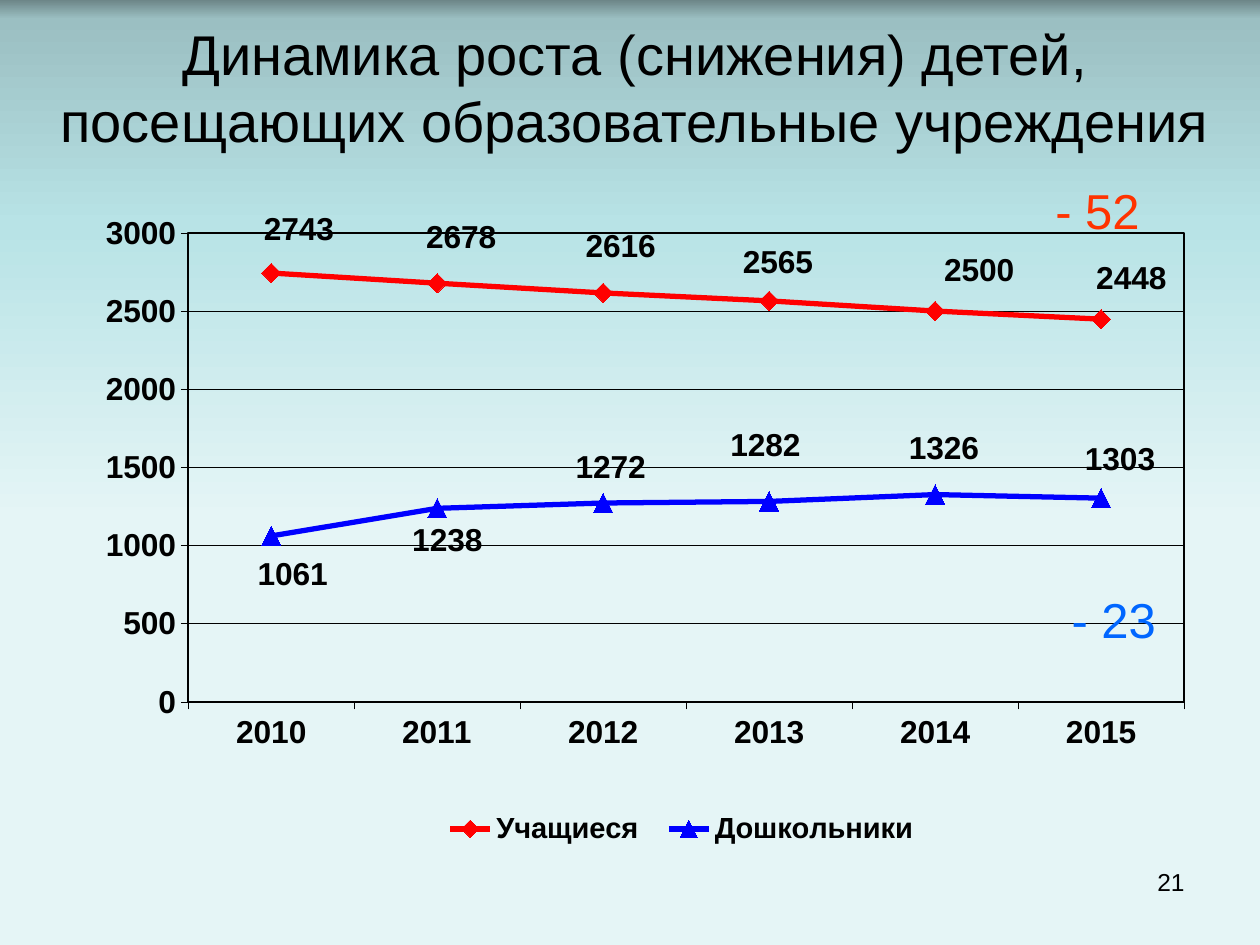
from lxml.etree import SubElement
from pptx import Presentation
from pptx.chart.data import CategoryChartData
from pptx.dml.color import RGBColor
from pptx.enum.chart import (XL_CHART_TYPE, XL_LABEL_POSITION, XL_LEGEND_POSITION,
                             XL_MARKER_STYLE, XL_TICK_MARK)
from pptx.enum.text import MSO_ANCHOR, MSO_AUTO_SIZE, PP_ALIGN
from pptx.oxml import parse_xml
from pptx.oxml.ns import nsdecls, qn
from pptx.util import Inches, Pt

FONT = "Arial"
BLACK = RGBColor(0, 0, 0)
RED = RGBColor(0xFF, 0, 0)
BLUE = RGBColor(0, 0, 0xFF)
ORANGE = RGBColor(0xFF, 0x33, 0)
SKY = RGBColor(0, 0x66, 0xFF)
BACKGROUND = [(0, RGBColor(0x6D, 0x86, 0x88)), (2, RGBColor(0x9B, 0xBF, 0xC2)),
              (24, RGBColor(0xB8, 0xE3, 0xE6)), (55, RGBColor(0xE5, 0xF5, 0xF6))]

YEARS = ["2010", "2011", "2012", "2013", "2014", "2015"]
SERIES = [
    ("Учащиеся", [2743, 2678, 2616, 2565, 2500, 2448], RED, XL_MARKER_STYLE.DIAMOND,
     [(0.22, -0.09), (0.19, -0.11), (0.14, -0.11), (0.07, -0.05), (0.35, -0.07), (0.24, -0.07)]),
    ("Дошкольники", [1061, 1238, 1272, 1282, 1326, 1303], BLUE, XL_MARKER_STYLE.TRIANGLE,
     [(0.17, 0.56), (0.08, 0.51), (0.06, -0.03), (-0.03, -0.19), (0.07, -0.11), (0.15, -0.05)]),
]
NO_LEADERS = (
    f'<c:extLst {nsdecls("c")}><c:ext uri="{{CE6537A1-D6FC-4f65-9D91-7224C49458BB}}" '
    'xmlns:c15="http://schemas.microsoft.com/office/drawing/2012/chart">'
    '<c15:showLeaderLines val="0"/></c:ext></c:extLst>')


def style_font(font, size, color=BLACK, bold=False):
    """Apply the slide's typeface with a size, colour and weight."""
    font.name, font.size, font.bold = FONT, Pt(size), bold
    font.color.rgb = color


def style_line(line, color, width):
    """Give a line a solid colour and a width in points."""
    line.color.rgb = color
    line.width = Pt(width)


def chart_layout(**values):
    """Return a manual layout element holding the given settings."""
    layout = parse_xml(f"<c:layout {nsdecls('c')}><c:manualLayout/></c:layout>")
    for tag, value in values.items():
        SubElement(layout[0], qn(f"c:{tag}")).set("val", str(value))
    return layout


def set_layout(parent, index, **values):
    """Replace the layout of a chart part."""
    for old in parent.findall(qn("c:layout")):
        parent.remove(old)
    parent.insert(index, chart_layout(**values))


def paint_background(s):
    """Fill the background with a vertical gradient."""
    fill = s.background.fill
    fill.gradient()
    fill.gradient_angle = 270
    stops = next(s.element.iter(qn("a:gsLst")))
    for stop in list(stops):
        stops.remove(stop)
    for pos, color in BACKGROUND:
        stop = SubElement(stops, qn("a:gs"), pos=str(pos * 1000))
        SubElement(stop, qn("a:srgbClr"), val=str(color))


def place_title(s, box, text):
    """Place and format the title placeholder."""
    sp = s.shapes.title
    sp.left, sp.top, sp.width, sp.height = map(Inches, box)
    tf = sp.text_frame
    tf.text = text
    tf.word_wrap, tf.auto_size = True, MSO_AUTO_SIZE.NONE
    tf.vertical_anchor = MSO_ANCHOR.MIDDLE
    p = tf.paragraphs[0]
    p.alignment = PP_ALIGN.CENTER
    style_font(p.runs[0].font, 32)


def add_text(s, box, text, size, color, align, anchor):
    """Add a one-line text box and return its text frame."""
    tf = s.shapes.add_textbox(*map(Inches, box)).text_frame
    tf.text = text
    tf.word_wrap, tf.vertical_anchor = True, anchor
    p = tf.paragraphs[0]
    p.alignment = align
    style_font(p.runs[0].font, size, color)
    return tf


def add_change(s, box, text, color):
    """Add a large centred figure for the change in the last year."""
    tf = add_text(s, box, text, 28, color, PP_ALIGN.CENTER, MSO_ANCHOR.MIDDLE)
    tf.word_wrap = False
    tf.margin_left = tf.margin_right = 0


def style_axis(axis):
    """Format an axis line, its ticks and its labels."""
    axis.major_tick_mark = XL_TICK_MARK.OUTSIDE
    axis.minor_tick_mark = XL_TICK_MARK.NONE
    style_font(axis.tick_labels.font, 18.1, bold=True)
    style_line(axis.format.line, BLACK, 0.25)


def style_series(series, color, marker, offsets, width, height):
    """Format a line with its markers and shift its labels by inches."""
    series.smooth = False
    style_line(series.format.line, color, 3)
    series.marker.style, series.marker.size = marker, 11
    series.marker.format.fill.solid()
    series.marker.format.fill.fore_color.rgb = color
    style_line(series.marker.format.line, color, 0.75)
    labels = series.data_labels
    labels.show_value = True
    style_font(labels.font, 18.1, bold=True)
    for i in range(len(offsets)):
        label = series.points[i].data_label
        style_font(label.font, 18.1, bold=True)
        label.position = XL_LABEL_POSITION.ABOVE
    labels_xml = labels._element
    for dlbl, (dx, dy) in zip(labels_xml.findall(qn("c:dLbl")), offsets):
        set_layout(dlbl, 1, x=round(dx / width, 4), y=round(dy / height, 4))
    for leader in labels_xml.findall(qn("c:showLeaderLines")):
        leader.set("val", "0")
    labels_xml.append(parse_xml(NO_LEADERS))


def add_line_chart(s, box):
    """Add the attendance line chart."""
    data = CategoryChartData()
    data.categories = YEARS
    for name, values, *_ in SERIES:
        data.add_series(name, values)
    chart = s.shapes.add_chart(XL_CHART_TYPE.LINE_MARKERS, *map(Inches, box), data).chart
    style_font(chart.font, 18.1, bold=True)
    chart.has_title = False
    chart.plots[0].vary_by_categories = False

    style_axis(chart.category_axis)
    axis = chart.value_axis
    style_axis(axis)
    axis.minimum_scale, axis.maximum_scale, axis.major_unit = 0, 3000, 500
    style_line(axis.major_gridlines.format.line, BLACK, 0.25)

    for series, (_, _, color, marker, offsets) in zip(chart.plots[0].series, SERIES):
        style_series(series, color, marker, offsets, *box[2:])

    chart.has_legend = True
    legend = chart.legend
    legend.position, legend.include_in_layout = XL_LEGEND_POSITION.BOTTOM, False
    style_font(legend.font, 16.6, bold=True)
    set_layout(legend._element, 1, xMode="edge", yMode="edge", x=0.32, y=0.93, w=0.45, h=0.07)

    area = next(chart.element.iter(qn("c:plotArea")))
    set_layout(area, 0, layoutTarget="inner", xMode="edge", yMode="edge",
               x=0.105, y=0.05, w=0.888, h=0.72)
    area.append(parse_xml(
        f'<c:spPr {nsdecls("c", "a")}><a:noFill/><a:ln w="{Pt(1)}"><a:solidFill>'
        f'<a:srgbClr val="{BLACK}"/></a:solidFill></a:ln></c:spPr>'))


def main():
    """Build and save the slide."""
    prs = Presentation()
    prs.slide_width, prs.slide_height = Inches(10), Inches(7.5)
    s = prs.slides.add_slide(prs.slide_layouts[5])
    paint_background(s)
    place_title(s, (0.33, 0.3, 9.42, 0.78),
                "Динамика роста (снижения) детей, посещающих образовательные учреждения")
    add_text(s, (7.17, 6.83, 2.33, 0.52), "21", 14, BLACK, PP_ALIGN.RIGHT, MSO_ANCHOR.TOP)
    add_line_chart(s, (0.56, 1.59, 8.9, 5.17))
    add_change(s, (8.42, 4.58, 0.84, 0.67), "- 23", SKY)
    add_change(s, (8.25, 1.33, 0.92, 0.67), "- 52", ORANGE)
    prs.save("out.pptx")


if __name__ == "__main__":
    main()
